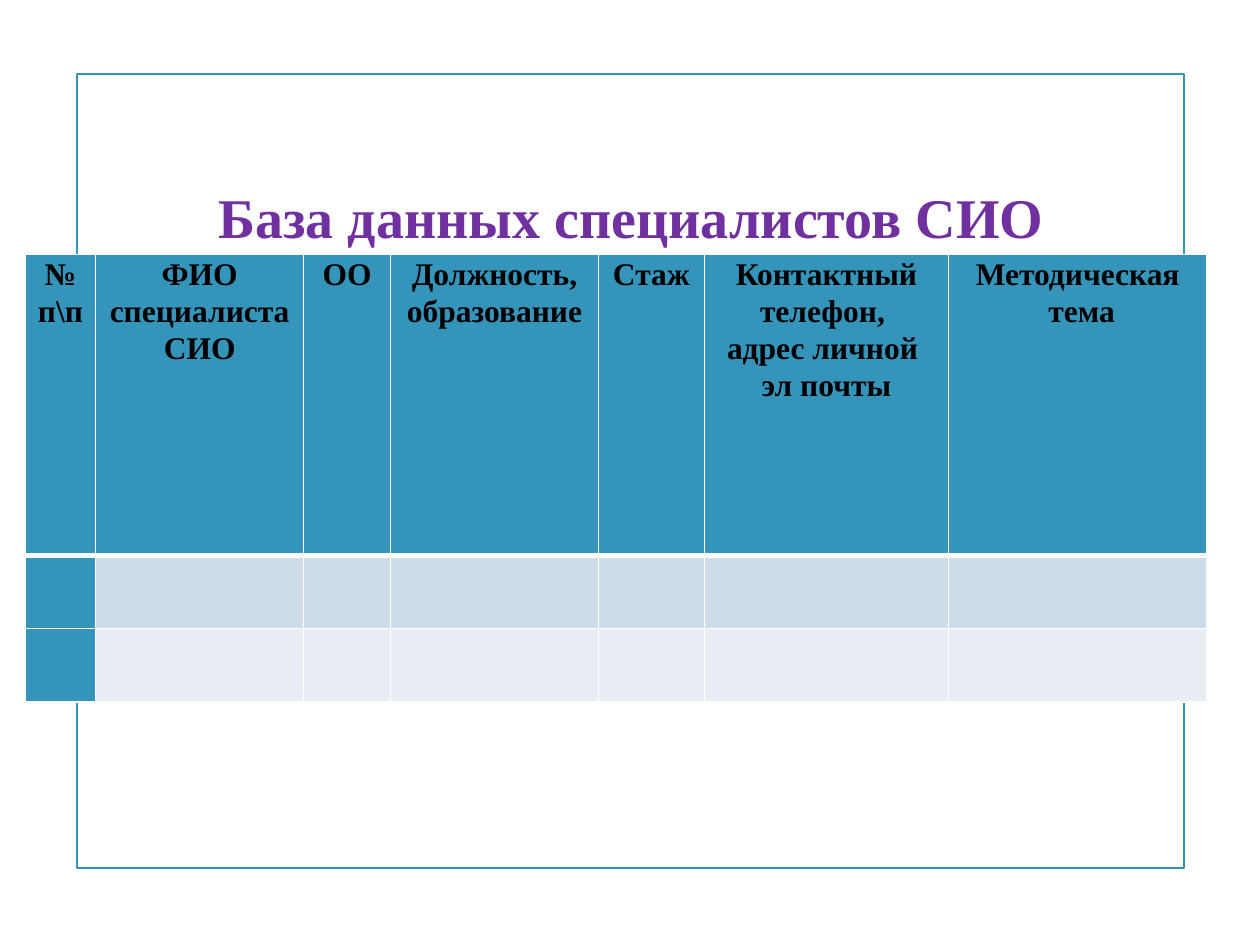
import pptx
import pptx.util
import pptx.dml.color
import pptx.enum.shapes
import pptx.enum.text
import pptx.oxml
import pptx.oxml.ns

Inches, Pt = pptx.util.Inches, pptx.util.Pt
CENTER = pptx.enum.text.PP_ALIGN.CENTER
MIDDLE = pptx.enum.text.MSO_ANCHOR.MIDDLE

# Content: each header is a list of paragraphs
TITLE = "База данных специалистов СИО"
HEADERS = [
    ["№ п\\п"],
    ["ФИО специалиста СИО"],
    ["ОО"],
    ["Должность,", "образование"],
    ["Стаж"],
    ["Контактный телефон, ", "адрес личной ", "эл почты"],
    ["Методическая", " тема"],
]
COL_WIDTHS = [0.56, 1.65, 0.69, 1.65, 0.84, 1.94, 2.05]
ROW_HEIGHTS = [2.39, 0.58, 0.58]
BAND_FILLS = ["CEDCE7", "E8EEF3"]
ACCENT, PURPLE, BLACK, WHITE = "3494BA", "7030A0", "000000", "FFFFFF"
FONT = "Times New Roman"


def rgb(value):
    return pptx.dml.color.RGBColor.from_string(value)


def style_paragraph(p, size, color):
    p.alignment = CENTER
    for r in p.runs:
        r.font.name = FONT
        r.font.size = Pt(size)
        r.font.bold = True
        r.font.color.rgb = rgb(color)


def set_borders(cell, widths):
    """Widths in points for the left, right, top and bottom sides."""
    tc_pr = cell._tc.get_or_add_tcPr()
    for i, (side, width) in enumerate(zip("LRTB", widths)):
        tc_pr.insert(i, pptx.oxml.parse_xml(
            f'<a:ln{side} {pptx.oxml.ns.nsdecls("a")} w="{Pt(width)}">'
            f'<a:solidFill><a:srgbClr val="{WHITE}"/></a:solidFill></a:ln{side}>'))


prs = pptx.Presentation()
prs.slide_width, prs.slide_height = Inches(10), Inches(7.5)
s = prs.slides.add_slide(prs.slide_layouts[6])

# Frame
frame = s.shapes.add_shape(pptx.enum.shapes.MSO_SHAPE.RECTANGLE,
                           Inches(0.61), Inches(0.59), Inches(8.79), Inches(6.3))
frame.shadow.inherit = False
frame.fill.background()
frame.line.color.rgb = rgb(ACCENT)
frame.line.width = Pt(1.25)

# Title
title = s.shapes.add_textbox(Inches(1.29), Inches(1), Inches(7.44), Inches(1.43))
tf = title.text_frame
tf.word_wrap = True
tf.vertical_anchor = MIDDLE
tf.text = TITLE
style_paragraph(tf.paragraphs[0], 32, PURPLE)

# Table grid
table = s.shapes.add_table(len(ROW_HEIGHTS), len(COL_WIDTHS), Inches(0.2), Inches(2.02),
                           Inches(sum(COL_WIDTHS)), Inches(sum(ROW_HEIGHTS))).table
table.first_col = True
for column, width in zip(table.columns, COL_WIDTHS):
    column.width = Inches(width)
for row, height in zip(table.rows, ROW_HEIGHTS):
    row.height = Inches(height)

# Cell fills and borders, with a thick rule under the header
for i, row in enumerate(table.rows):
    for j, cell in enumerate(row.cells):
        cell.fill.solid()
        cell.fill.fore_color.rgb = rgb(ACCENT if i == 0 or j == 0 else BAND_FILLS[i - 1])
        set_borders(cell, (1, 1, 3 if i == 1 else 1, 3 if i == 0 else 1))

# Header text
for cell, lines in zip(table.rows[0].cells, HEADERS):
    cell.margin_left = cell.margin_right = Inches(0.07)
    cell.margin_top = cell.margin_bottom = 0
    cell.text_frame.text = "\n".join(lines)
    for p in cell.text_frame.paragraphs:
        p.line_spacing = 1.07
        style_paragraph(p, 18, BLACK)

prs.save("out.pptx")
